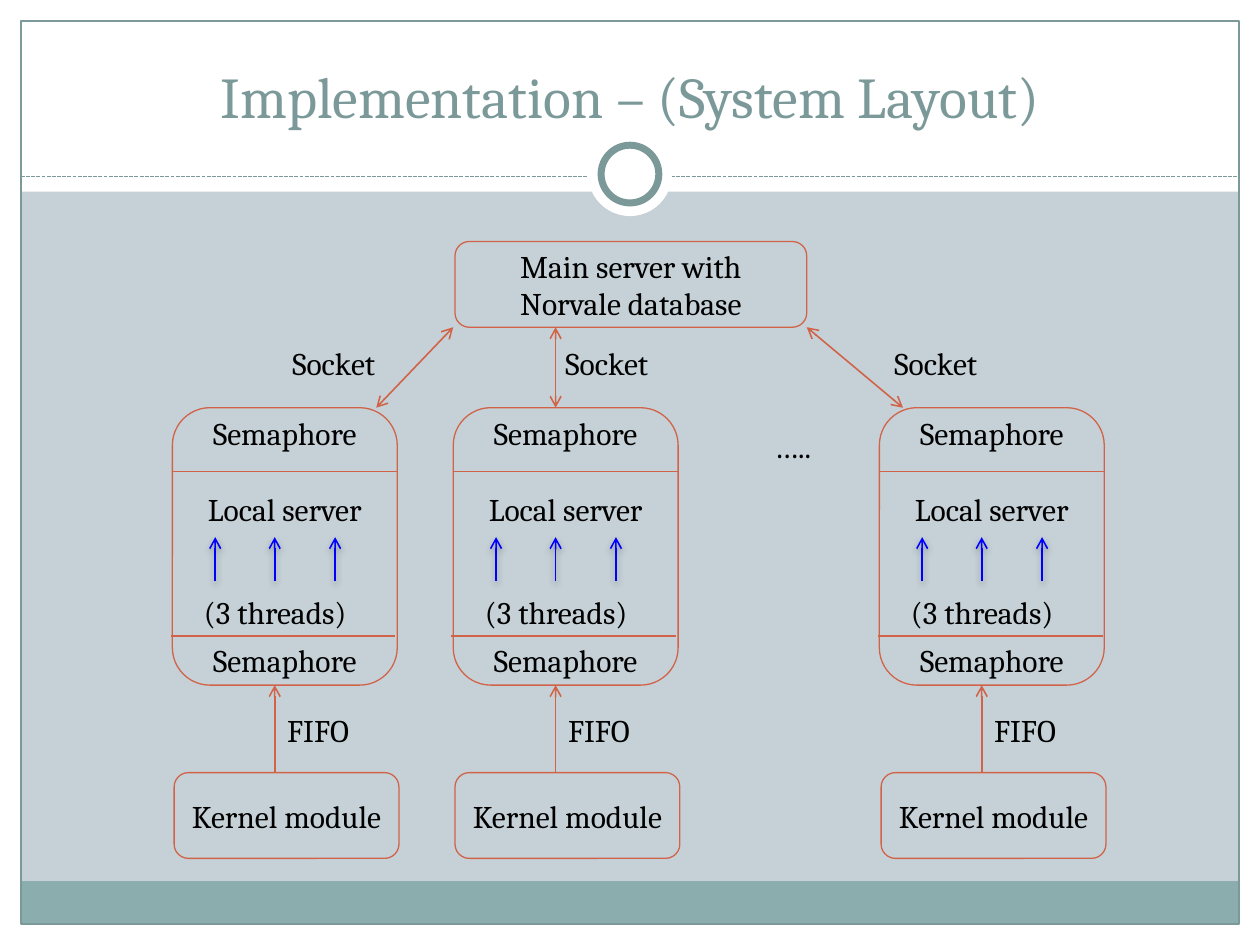
from dataclasses import dataclass
from typing import Optional

import pptx
import pptx.dml.color
import pptx.enum.dml
import pptx.enum.shapes
import pptx.enum.text
import pptx.oxml
import pptx.oxml.ns
import pptx.util

Pt = pptx.util.Pt
Preset = pptx.enum.shapes.MSO_SHAPE
Connector = pptx.enum.shapes.MSO_CONNECTOR
Align = pptx.enum.text.PP_ALIGN
Anchor = pptx.enum.text.MSO_ANCHOR


@dataclass(frozen=True)
class Theme:
    font: str = "Cambria"
    title_size: float = 33
    body_size: float = 18
    background: str = "C5D1D7"
    white: str = "FFFFFF"
    band: str = "8CADAE"
    frame: str = "7C999A"
    outline: str = "D16349"
    thread: str = "0000FF"
    text: str = "000000"
    thin: float = 0.75
    link: float = 0.9
    ring: float = 4


@dataclass(frozen=True)
class Box:
    left: float
    top: float
    width: float
    height: float


@dataclass(frozen=True)
class Panel:
    """One background part of the slide frame."""
    preset: int
    box: Box
    fill: Optional[str] = None
    line: Optional[str] = None
    weight: float = 0.75


@dataclass(frozen=True)
class LocalServer:
    """One column of the diagram and its link to the main server."""
    left: float
    socket_left: float
    link_bottom: float
    link_top: float


THEME = Theme()
SLIDE = Box(0, 0, 720, 540)
MARGIN = 12
RULE_TOP = 101
SERVER_TOP, SERVER_BOTTOM = 233, 391.5
SERVER_WIDTH = 128.5
MODULE_HEIGHT = 49
MODULE_TOP = 441.5
MAIN_SERVER = Box(260, 138, 201, MODULE_HEIGHT)
MAIN_BOTTOM = MAIN_SERVER.top + MAIN_SERVER.height
LABEL_HEIGHT = 29
LINE_HEIGHT = 21.7
THREAD_OFFSETS = (24.5, 58.5, 93)
CENTRE_THREAD = THREAD_OFFSETS[1]

PANELS = (
    Panel(Preset.RECTANGLE, Box(0, 528, SLIDE.width, MARGIN), THEME.white),
    Panel(Preset.RECTANGLE, Box(0, 0, SLIDE.width, 109.5), THEME.white),
    Panel(Preset.RECTANGLE, Box(0, 0, MARGIN, SLIDE.height), THEME.white),
    Panel(Preset.RECTANGLE, Box(708, 0, MARGIN, SLIDE.height), THEME.white),
    Panel(Preset.RECTANGLE, Box(MARGIN, 503.5, 696, 24.5), THEME.band),
    Panel(Preset.RECTANGLE, Box(MARGIN, MARGIN, 696, 516), None, THEME.frame),
)
RINGS = (
    Panel(Preset.OVAL, Box(336, 75.5, 48, 48), THEME.white),
    Panel(Preset.OVAL, Box(343.5, 83, 33, 33), THEME.white, THEME.frame, THEME.ring),
)
SERVERS = (
    LocalServer(98.5, 160, 215, 259),
    LocalServer(259, 316, 317.5, 317.5),
    LocalServer(502.5, 504, 516, 461),
)


def color(value: str) -> pptx.dml.color.RGBColor:
    return pptx.dml.color.RGBColor.from_string(value)


def place(box: Box) -> tuple:
    return Pt(box.left), Pt(box.top), Pt(box.width), Pt(box.height)


def write(shape, text: str, size: float, ink: str, align: int, anchor: int) -> None:
    frame = shape.text_frame
    frame.word_wrap = True
    frame.vertical_anchor = anchor
    frame.text = text
    for paragraph in frame.paragraphs:
        paragraph.alignment = align
        for run in paragraph.runs:
            run.font.name = THEME.font
            run.font.size = Pt(size)
            run.font.color.rgb = color(ink)


def add_panel(slide, panel: Panel):
    shape = slide.shapes.add_shape(panel.preset, *place(panel.box))
    shape.shadow.inherit = False
    if panel.fill:
        shape.fill.solid()
        shape.fill.fore_color.rgb = color(panel.fill)
    else:
        shape.fill.background()
    if panel.line:
        shape.line.color.rgb = color(panel.line)
        shape.line.width = Pt(panel.weight)
    else:
        shape.line.fill.background()
    return shape


def add_node(slide, box: Box, text: str):
    shape = add_panel(slide, Panel(Preset.ROUNDED_RECTANGLE, box, line=THEME.outline))
    write(shape, text, THEME.body_size, THEME.text, Align.CENTER, Anchor.MIDDLE)
    return shape


def add_label(slide, left: float, top: float, width: float, text: str) -> None:
    shape = slide.shapes.add_textbox(*place(Box(left, top, width, LABEL_HEIGHT)))
    write(shape, text, THEME.body_size, THEME.text, Align.LEFT, Anchor.TOP)


def add_line(slide, start: tuple, end: tuple, ink: str = THEME.outline,
             weight: float = THEME.link, arrows: tuple = (),
             kind: int = Connector.STRAIGHT, shadow: str = ""):
    """Draw a connector; arrows names its arrow ends, headEnd or tailEnd."""
    line = slide.shapes.add_connector(kind, *map(Pt, start + end))
    line.line.color.rgb = color(ink)
    line.line.width = Pt(weight)
    namespace = pptx.oxml.ns.nsdecls("a")
    for arrow in arrows:
        line.line._get_or_add_ln().append(
            pptx.oxml.parse_xml(f'<a:{arrow} {namespace} type="arrow"/>'))
    line._element.spPr.append(
        pptx.oxml.parse_xml(f"<a:effectLst {namespace}>{shadow}</a:effectLst>"))
    return line


def add_frame(slide) -> None:
    slide.background.fill.solid()
    slide.background.fill.fore_color.rgb = color(THEME.background)
    for panel in PANELS:
        add_panel(slide, panel)
    rule = add_line(slide, (MARGIN, RULE_TOP), (708, RULE_TOP), THEME.frame, THEME.thin)
    rule.line.dash_style = pptx.enum.dml.MSO_LINE.SQUARE_DOT
    for ring in RINGS:
        add_panel(slide, ring)
    title = slide.shapes.add_textbox(*place(Box(24, 18, 672, 60)))
    write(title, "Implementation – (System Layout)", THEME.title_size, THEME.frame,
          Align.CENTER, Anchor.BOTTOM)


def add_thread(slide, x: float) -> None:
    shadow = (f'<a:outerShdw blurRad="{Pt(4)}" dist="{Pt(2)}" dir="5400000" '
              'rotWithShape="0"><a:srgbClr val="000000"><a:alpha val="35000"/>'
              "</a:srgbClr></a:outerShdw>")
    add_line(slide, (x, 332), (x, 307), THEME.thread, arrows=("tailEnd",),
             kind=Connector.CURVE, shadow=shadow)


def add_local_server(slide, server: LocalServer) -> None:
    left, centre = server.left, server.left + CENTRE_THREAD
    body = Box(left, SERVER_TOP, SERVER_WIDTH, SERVER_BOTTOM - SERVER_TOP)
    node = add_node(slide, body, "Semaphore\nLocal server\nSemaphore")
    for paragraph, gap_lines in zip(node.text_frame.paragraphs, (0, 1, 3)):
        paragraph.space_before = Pt(gap_lines * LINE_HEIGHT)
    for shift, y in ((0.5, 269.5), (-1, 363.5)):
        add_line(slide, (left + shift, y), (left + shift + SERVER_WIDTH, y))
    for offset in THREAD_OFFSETS:
        add_thread(slide, left + offset)
    add_label(slide, left + 11, 335.5, 103, "(3 threads)")
    add_node(slide, Box(left + 1, MODULE_TOP, SERVER_WIDTH, MODULE_HEIGHT), "Kernel module")
    add_line(slide, (centre, MODULE_TOP), (centre, SERVER_BOTTOM), arrows=("tailEnd",))
    add_label(slide, centre, 402.5, 57, "FIFO")
    add_line(slide, (server.link_bottom, SERVER_TOP), (server.link_top, MAIN_BOTTOM),
             arrows=("headEnd", "tailEnd"))
    add_label(slide, server.socket_left, 193, 68, "Socket")


def main() -> None:
    presentation = pptx.Presentation()
    presentation.slide_width, presentation.slide_height = Pt(SLIDE.width), Pt(SLIDE.height)
    slide = presentation.slides.add_slide(presentation.slide_layouts[6])
    add_frame(slide)
    add_node(slide, MAIN_SERVER, "Main server with Norvale database")
    for server in SERVERS:
        add_local_server(slide, server)
    add_label(slide, 435.5, 240.5, 39, "…..")
    presentation.save("out.pptx")


if __name__ == "__main__":
    main()
